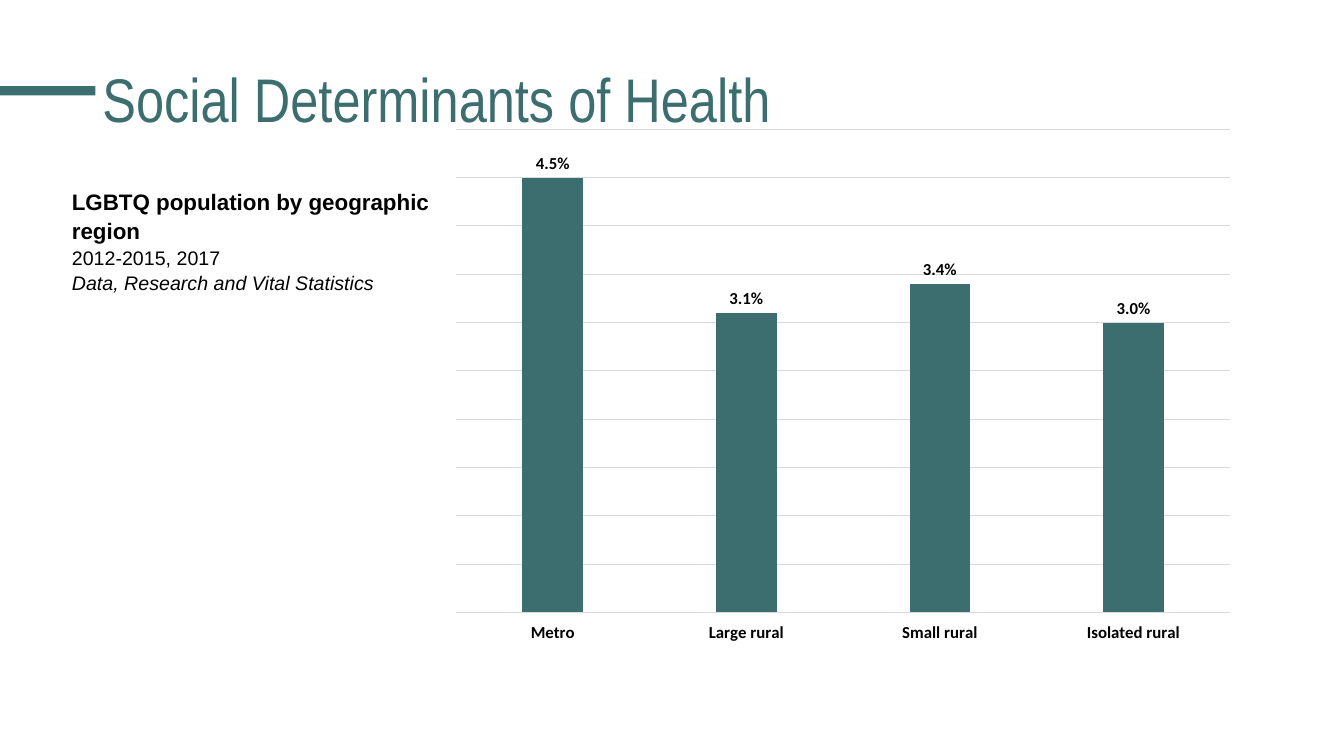
from pptx import Presentation
from pptx.chart.data import CategoryChartData
from pptx.dml.color import RGBColor
from pptx.enum.chart import XL_CHART_TYPE, XL_LABEL_POSITION, XL_TICK_LABEL_POSITION, XL_TICK_MARK
from pptx.enum.shapes import MSO_SHAPE
from pptx.enum.text import MSO_ANCHOR, MSO_AUTO_SIZE, PP_ALIGN
from pptx.util import Pt

TEAL = RGBColor(0x3D, 0x6E, 0x6F)
GRID = RGBColor(0xD9, 0xD9, 0xD9)
BLACK = RGBColor(0, 0, 0)

TITLE = "Social Determinants of Health"
CAPTION = [
    ("LGBTQ population by geographic region", 16, True, False),
    ("2012-2015, 2017", 14, False, False),
    ("Data, Research and Vital Statistics", 14, False, True),
]
POPULATION = {"Metro": 0.045, "Large rural": 0.031, "Small rural": 0.034, "Isolated rural": 0.03}

SLIDE_SIZE = (1280, 720)
ACCENT_BOX = (0, 82, 91, 9)
TITLE_BOX = (88, 19, 1104, 158)
CAPTION_BOX = (59, 173, 360, 115)
CHART_BOX = (419, 113, 768, 509)
EMU_PER_PX = 9525


def emu(lengths):
    return [length * EMU_PER_PX for length in lengths]


def set_font(font, name, size, color, bold=False, italic=False):
    font.name, font.size, font.bold, font.italic = name, Pt(size), bold, italic
    font.color.rgb = color


def add_accent(page):
    bar = page.shapes.add_shape(MSO_SHAPE.RECTANGLE, *emu(ACCENT_BOX))
    bar.shadow.inherit = False
    bar.fill.solid()
    bar.fill.fore_color.rgb = TEAL
    bar.line.fill.background()


def add_title(page):
    title = page.shapes.title
    title.left, title.top, title.width, title.height = emu(TITLE_BOX)
    frame = title.text_frame
    frame.text = TITLE
    frame.vertical_anchor = MSO_ANCHOR.MIDDLE
    para = frame.paragraphs[0]
    para.alignment = PP_ALIGN.LEFT
    para.line_spacing = 0.9
    set_font(para.font, "Arial Narrow", 44, TEAL)


def add_caption(page):
    frame = page.shapes.add_textbox(*emu(CAPTION_BOX)).text_frame
    frame.word_wrap = True
    frame.auto_size = MSO_AUTO_SIZE.SHAPE_TO_FIT_TEXT
    for index, (text, size, bold, italic) in enumerate(CAPTION):
        para = frame.add_paragraph() if index else frame.paragraphs[0]
        para.text = text
        para.line_spacing = 1.07
        set_font(para.font, "Arial", size, BLACK, bold, italic)


def add_population_chart(page):
    data = CategoryChartData(number_format="0.0%")
    data.categories = list(POPULATION)
    data.add_series("Series 1", list(POPULATION.values()))
    chart = page.shapes.add_chart(XL_CHART_TYPE.COLUMN_CLUSTERED, *emu(CHART_BOX), data).chart
    chart.has_legend = False
    chart.has_title = False
    set_font(chart.font, "Calibri", 10, BLACK)

    category_axis = chart.category_axis
    category_axis.major_tick_mark = XL_TICK_MARK.NONE
    category_axis.tick_label_position = XL_TICK_LABEL_POSITION.LOW
    set_font(category_axis.tick_labels.font, "Calibri", 12, BLACK, bold=True)

    value_axis = chart.value_axis
    value_axis.minimum_scale, value_axis.maximum_scale = 0, 0.05
    value_axis.major_unit = 0.005
    value_axis.visible = False
    value_axis.has_major_gridlines = True
    for line in (category_axis.format.line, value_axis.major_gridlines.format.line):
        line.color.rgb = GRID
        line.width = Pt(0.75)

    plot = chart.plots[0]
    plot.vary_by_categories = False
    plot.gap_width, plot.overlap = 219, -27
    fill = plot.series[0].format.fill
    fill.solid()
    fill.fore_color.rgb = TEAL
    plot.has_data_labels = True
    labels = plot.data_labels
    labels.show_value = True
    labels.position = XL_LABEL_POSITION.OUTSIDE_END
    labels.number_format, labels.number_format_is_linked = "0.0%", False
    set_font(labels.font, "Calibri", 12, BLACK, bold=True)


def main():
    """Build the slide on the LGBTQ population by geographic region."""
    deck = Presentation()
    deck.slide_width, deck.slide_height = emu(SLIDE_SIZE)
    page = deck.slides.add_slide(deck.slide_layouts[5])
    add_accent(page)
    add_title(page)
    add_caption(page)
    add_population_chart(page)
    deck.save("out.pptx")


if __name__ == "__main__":
    main()
